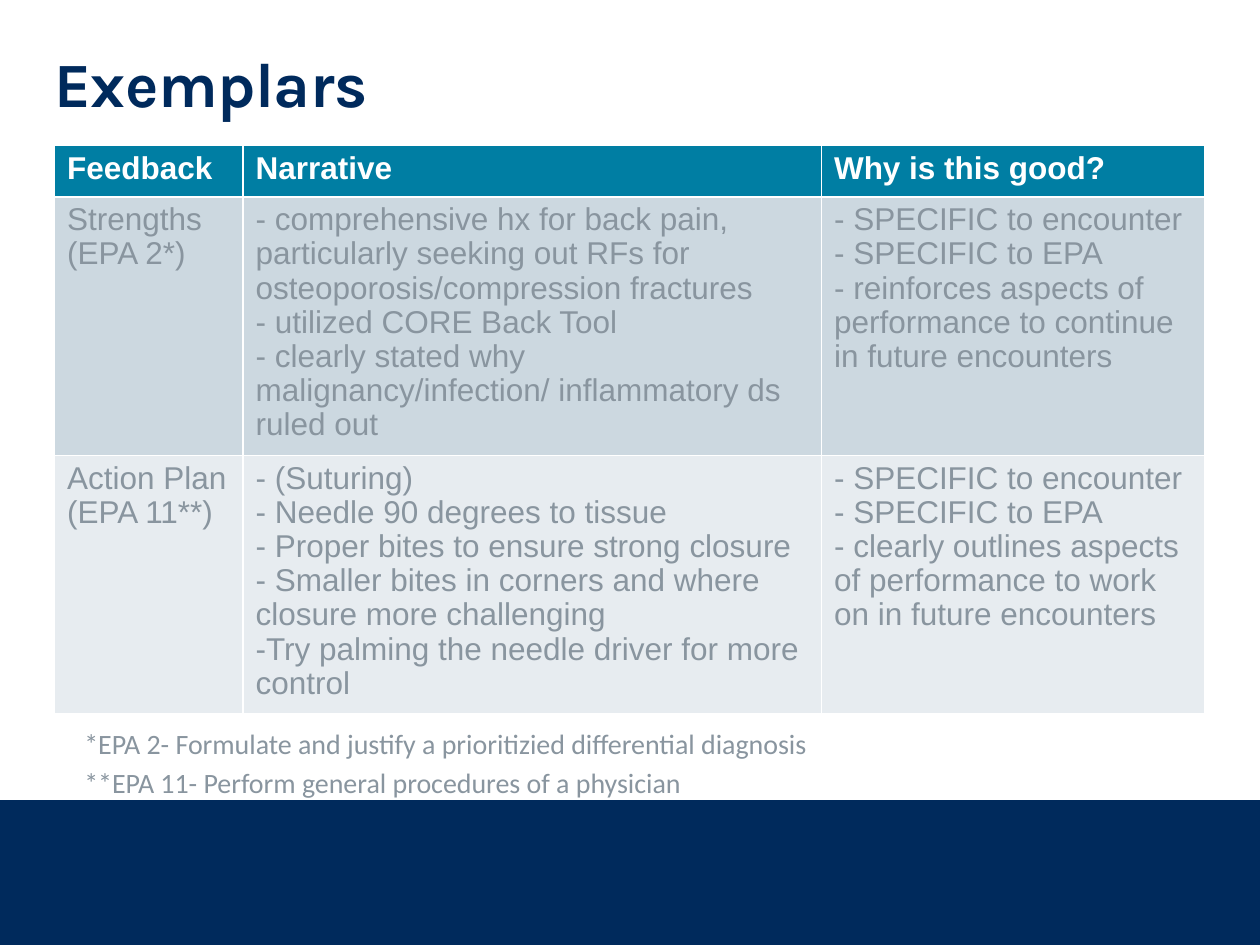
from pptx import Presentation
from pptx.dml.color import RGBColor
from pptx.enum.shapes import MSO_SHAPE as Shape
from pptx.enum.text import MSO_ANCHOR as Anchor, MSO_AUTO_SIZE as AutoSize, PP_ALIGN as Align
from pptx.util import Cm, Pt

NAVY, TEAL, GREY, WHITE = "002A5C", "007EA3", "89959F", "FFFFFF"
ROW_FILLS = [TEAL, "CCD8E0", "E7ECF0"]
COL_WIDTHS = [3.8, 11.66, 7.73]
ROW_HEIGHTS = [1.04, 5.21, 5.21]

EXEMPLARS = [
    [["Feedback"], ["Narrative"], ["Why is this good?"]],
    [
        ["Strengths (EPA 2*)"],
        ["- comprehensive hx for back pain, particularly seeking out RFs for "
         "osteoporosis/compression fractures",
         "- utilized CORE Back Tool",
         "- clearly stated why malignancy/infection/ inflammatory ds ruled out"],
        ["- SPECIFIC to encounter",
         "- SPECIFIC to EPA",
         "- reinforces aspects of performance to continue in future encounters"],
    ],
    [
        ["Action Plan (EPA 11**)"],
        ["- (Suturing)",
         "- Needle 90 degrees to tissue",
         "- Proper bites to ensure strong closure",
         "- Smaller bites in corners and where closure more challenging",
         "-Try palming the needle driver for more control"],
        ["- SPECIFIC to encounter",
         "- SPECIFIC to EPA",
         "- clearly outlines aspects of performance to work on in future encounters"],
    ],
]
FOOTNOTES = [
    "*EPA 2- Formulate and justify a prioritizied differential diagnosis",
    "**EPA 11- Perform general procedures of a physician",
]


def rgb(color):
    return RGBColor.from_string(color)


def box(left, top, width, height):
    return Cm(left), Cm(top), Cm(width), Cm(height)


def set_font(p, name, size, color, bold=False):
    p.font.name, p.font.size, p.font.bold = name, Pt(size), bold
    p.font.color.rgb = rgb(color)


def clear_margins(tf):
    tf.margin_left = tf.margin_top = tf.margin_right = tf.margin_bottom = 0


def fill_paragraphs(tf, lines):
    """Put one line in each paragraph and return the paragraphs."""
    tf.text = "\n".join(lines)
    return tf.paragraphs


def add_footer_bar(slide, area):
    sp = slide.shapes.add_shape(Shape.RECTANGLE, *area)
    sp.shadow.inherit = False
    sp.fill.solid()
    sp.fill.fore_color.rgb = rgb(NAVY)
    sp.line.fill.background()


def place_title(slide, area, text):
    sp = slide.shapes.title
    sp.left, sp.top, sp.width, sp.height = area
    tf = sp.text_frame
    clear_margins(tf)
    tf.vertical_anchor = Anchor.TOP
    tf.auto_size = AutoSize.NONE
    p = fill_paragraphs(tf, [text])[0]
    p.alignment = Align.LEFT
    set_font(p, "Karla", 36, NAVY, bold=True)
    p.runs[0].font._element.set("spc", "-30")


def add_exemplar_table(slide, area):
    table = slide.shapes.add_table(len(ROW_HEIGHTS), len(COL_WIDTHS), *area).table
    for col, width in zip(table.columns, COL_WIDTHS):
        col.width = Cm(width)
    for i, (row, height, fill) in enumerate(zip(table.rows, ROW_HEIGHTS, ROW_FILLS)):
        row.height = Cm(height)
        header = i == 0
        for cell, lines in zip(row.cells, EXEMPLARS[i]):
            cell.fill.solid()
            cell.fill.fore_color.rgb = rgb(fill)
            for p in fill_paragraphs(cell.text_frame, lines):
                p.line_spacing = 0.97
                set_font(p, "Arial", 18, WHITE if header else GREY, bold=header)


def add_footnotes(slide, area):
    tf = slide.shapes.add_textbox(*area).text_frame
    clear_margins(tf)
    tf.word_wrap = True
    for i, p in enumerate(fill_paragraphs(tf, FOOTNOTES)):
        if i:
            p.space_before = Pt(3)
        set_font(p, "Calibri", 16, GREY)


def main():
    prs = Presentation()
    prs.slide_width, prs.slide_height = Cm(25.4), Cm(19.05)
    slide = prs.slides.add_slide(prs.slide_layouts[5])
    add_footer_bar(slide, box(0, 16.13, 25.4, 2.92))
    place_title(slide, box(1.1, 0.9, 22.78, 2.64), "Exemplars")
    add_exemplar_table(slide, box(1.1, 2.93, sum(COL_WIDTHS), sum(ROW_HEIGHTS)))
    add_footnotes(slide, box(1.7, 14.65, 17.2, 1.47))
    prs.save("out.pptx")


if __name__ == "__main__":
    main()
